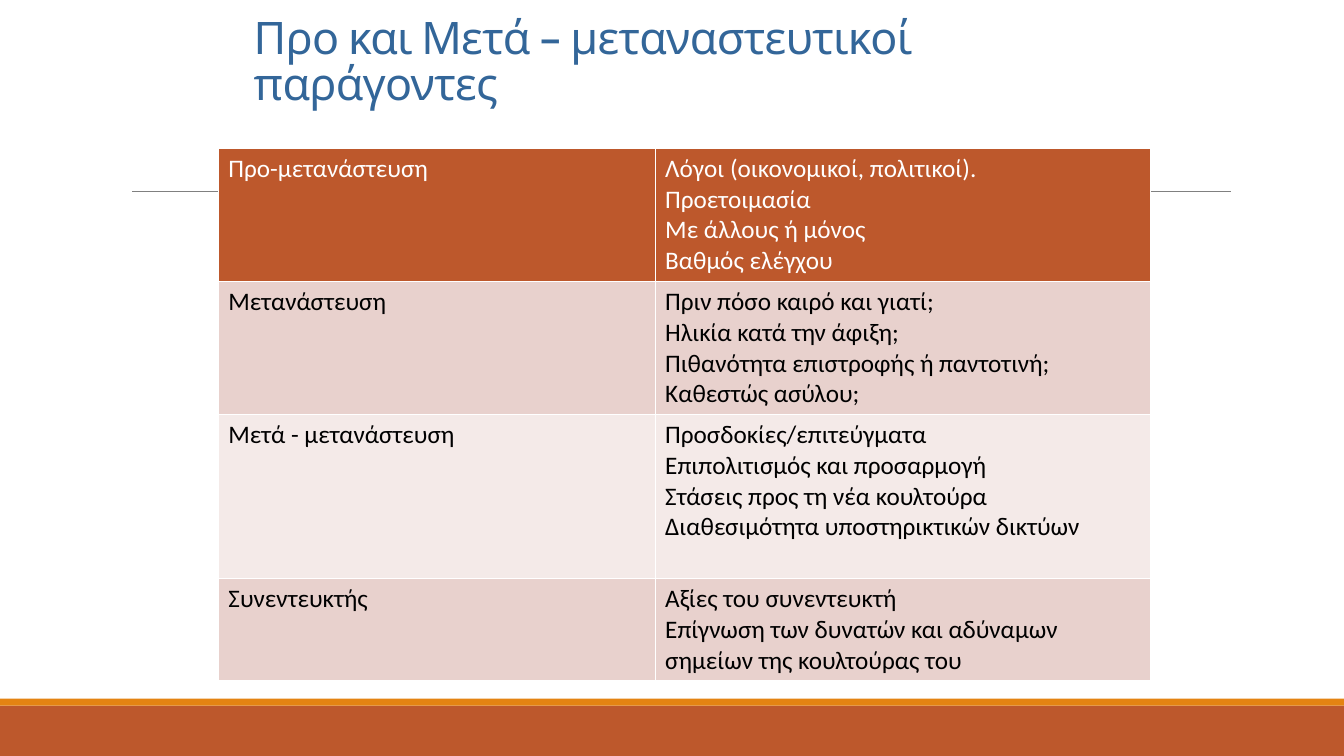
from lxml.etree import SubElement
from pptx import Presentation
from pptx.dml.color import RGBColor
from pptx.enum.shapes import MSO_CONNECTOR, MSO_SHAPE
from pptx.enum.text import MSO_ANCHOR, PP_ALIGN
from pptx.oxml.ns import qn
from pptx.util import Pt

WIDTH, HEIGHT = 960, 540
RUST, ORANGE, WHITE, BLACK = "BD582C", "E48312", "FFFFFF", "000000"
DARK_BAND, LIGHT_BAND = "E8D1CD", "F4EAE8"

FACTORS = [
    ("Προ-μετανάστευση",
     ["Λόγοι (οικονομικοί, πολιτικοί).", "Προετοιμασία",
      "Με άλλους ή μόνος", "Βαθμός ελέγχου"], 95),
    ("Μετανάστευση",
     ["Πριν πόσο καιρό και γιατί;", "Ηλικία κατά την άφιξη;",
      "Πιθανότητα επιστροφής ή παντοτινή; Καθεστώς ασύλου;"], 95),
    ("Μετά - μετανάστευση",
     ["Προσδοκίες/επιτεύγματα", "Επιπολιτισμός και προσαρμογή",
      "Στάσεις προς τη νέα κουλτούρα",
      "Διαθεσιμότητα υποστηρικτικών δικτύων"], 117),
    ("Συνεντευκτής",
     ["Αξίες του συνεντευκτή",
      "Επίγνωση των δυνατών και αδύναμων σημείων της κουλτούρας του"], 73),
]


def paint(color_format, hex_color):
    """Set a colour format to a hex colour."""
    color_format.rgb = RGBColor.from_string(hex_color)


def fill_solid(target, hex_color):
    """Give a shape or cell a solid fill."""
    target.fill.solid()
    paint(target.fill.fore_color, hex_color)


def add_band(slide, left, top, width, height, hex_color):
    """Add a plain footer band."""
    band = slide.shapes.add_shape(
        MSO_SHAPE.RECTANGLE, Pt(left), Pt(top), Pt(width), Pt(height))
    band.shadow.inherit = False
    fill_solid(band, hex_color)
    band.line.fill.background()


def add_footer(slide, left, top, width, height, accent=5):
    """Add the rust footer with its orange accent on top."""
    add_band(slide, left, top + accent, width, height - accent, RUST)
    add_band(slide, left, top, width, accent, ORANGE)


def add_rule(slide, left, top, width):
    """Add the thin grey rule that runs behind the table."""
    rule = slide.shapes.add_connector(
        MSO_CONNECTOR.STRAIGHT, Pt(left), Pt(top), Pt(left + width), Pt(top))
    rule.line.width = Pt(0.5)
    paint(rule.line.color, "808080")
    SubElement(rule.element.spPr, qn("a:effectLst"))


def set_title(slide, left, top, width, height):
    """Place and format the title placeholder."""
    title = slide.shapes.title
    title.left, title.top = Pt(left), Pt(top)
    title.width, title.height = Pt(width), Pt(height)
    frame = title.text_frame
    frame.text = "Προ και Μετά – μεταναστευτικοί παράγοντες"
    frame.vertical_anchor = MSO_ANCHOR.BOTTOM
    frame.word_wrap = True
    heading = frame.paragraphs[0]
    heading.alignment = PP_ALIGN.LEFT
    heading.line_spacing = 0.85
    heading.font.name, heading.font.size = "Cabin", Pt(32)
    paint(heading.font.color, "336699")
    heading.runs[0].font._element.set("spc", "-50")


def fill_cell(cell, lines, background, text_color):
    """Write lines of text into a table cell."""
    fill_solid(cell, background)
    cell.text = "\n".join(lines)
    for paragraph in cell.text_frame.paragraphs:
        paragraph.font.name, paragraph.font.size = "Calibri", Pt(18)
        paragraph.font.bold = False
        paint(paragraph.font.color, text_color)


def add_factors(slide, left, top, width, height):
    """Add the table of migration factors."""
    factors = slide.shapes.add_table(
        len(FACTORS), 2, Pt(left), Pt(top), Pt(width), Pt(height)).table
    stage_width = 312
    factors.columns[0].width = Pt(stage_width)
    factors.columns[1].width = Pt(width - stage_width)
    for index, (stage, details, row_height) in enumerate(FACTORS):
        factors.rows[index].height = Pt(row_height)
        background = DARK_BAND if index % 2 else LIGHT_BAND
        text_color = BLACK
        if index == 0:
            background, text_color = RUST, WHITE
        fill_cell(factors.cell(index, 0), [stage], background, text_color)
        fill_cell(factors.cell(index, 1), details, background, text_color)


def build_factors_slide(presentation):
    """Build the slide on factors before and after migration."""
    slide = presentation.slides.add_slide(presentation.slide_layouts[5])
    slide.background.fill.solid()
    paint(slide.background.fill.fore_color, WHITE)
    add_footer(slide, 0, 499, WIDTH, HEIGHT - 499)
    add_rule(slide, 94.5, 136.5, 784.5)
    set_title(slide, 174, 17, 648, 65)
    add_factors(slide, 156, 106, 666, sum(row[2] for row in FACTORS))


def main():
    """Create and save the presentation."""
    presentation = Presentation()
    presentation.slide_width, presentation.slide_height = Pt(WIDTH), Pt(HEIGHT)
    build_factors_slide(presentation)
    presentation.save("out.pptx")


if __name__ == "__main__":
    main()
